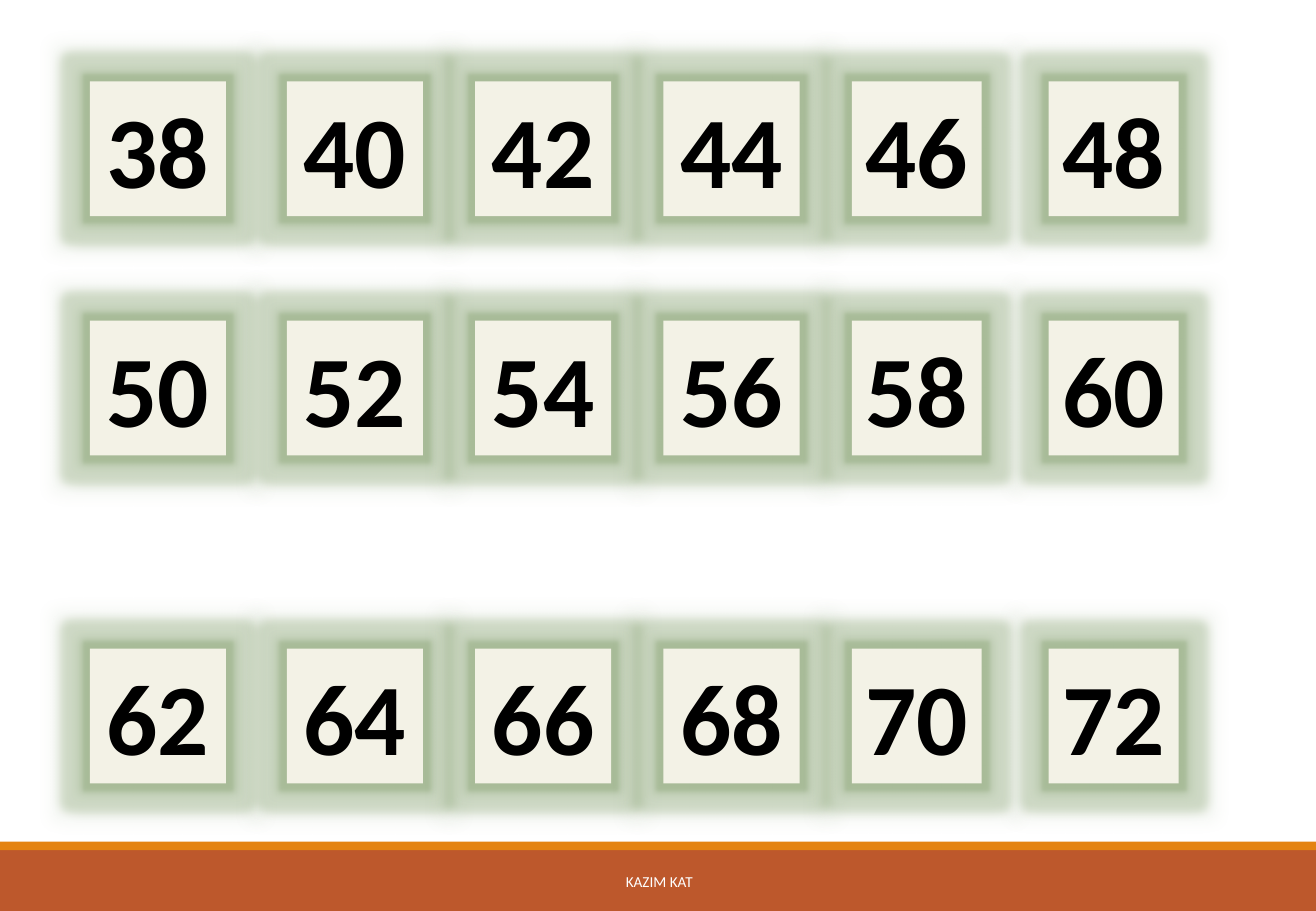
from lxml import etree
from pptx import Presentation
from pptx.dml.color import RGBColor
from pptx.enum.shapes import MSO_SHAPE
from pptx.enum.text import MSO_ANCHOR, PP_ALIGN
from pptx.oxml.ns import qn
from pptx.util import Inches, Pt

RECT = MSO_SHAPE.RECTANGLE
CENTER = PP_ALIGN.CENTER
TOP, MIDDLE = MSO_ANCHOR.TOP, MSO_ANCHOR.MIDDLE

UNIT = 0.1  # inches per grid column and row
WIDTH, HEIGHT = 108.3, 75
COLORS = {"card": "F3F2E6", "glow": "91AA7D", "number": "000000",
          "band": "BD582C", "stripe": "E48312", "footer": "FFFFFF"}
FORMATS = {
    "number": {"size": Pt(60), "bold": True, "name": "Calibri"},
    "footer": {"size": Pt(9), "bold": False, "name": "Calibri"},
}
CARD_COLUMNS = [(7.4, 11.2), (23.6, 11.2), (39.1, 11.2),
                (54.6, 11.2), (70.1, 10.7), (86.3, 10.7)]
CARD_ROWS = [6.7, 26.4, 53.4]
CARD_HEIGHT = 11.1
FIRST_NUMBER, STEP = 38, 2


class NumberSlide:
    def __init__(self):
        self.prs = Presentation()
        self.prs.slide_width, self.prs.slide_height = self.grid(WIDTH, HEIGHT)
        self.s = self.prs.slides.add_slide(self.prs.slide_layouts[6])

    def grid(self, *cells):
        return [Inches(n * UNIT) for n in cells]

    def rect(self, box, color):
        sp = self.s.shapes.add_shape(RECT, *self.grid(*box))
        sp.shadow.inherit = False
        sp.fill.solid()
        sp.fill.fore_color.rgb = RGBColor.from_string(COLORS[color])
        sp.line.fill.background()
        return sp

    def label(self, sp, text, style, anchor):
        tf = sp.text_frame
        tf.word_wrap = False
        tf.vertical_anchor = anchor
        p = tf.paragraphs[0]
        p.alignment = CENTER
        r = p.add_run()
        r.text = text
        for key, value in FORMATS[style].items():
            setattr(r.font, key, value)
        r.font.color.rgb = RGBColor.from_string(COLORS[style])

    def halo(self, sp):
        """Add a wide soft glow and a narrow, denser rim of the same colour."""
        effects = sp._element.spPr.find(qn("a:effectLst"))
        rim = {"blurRad": Pt(2), "sx": 111000, "sy": 111000,
               "algn": "ctr", "rotWithShape": 0}
        for tag, attrs in (("a:glow", {"rad": Pt(12)}), ("a:outerShdw", rim)):
            effect = etree.SubElement(effects, qn(tag))
            for key, value in attrs.items():
                effect.set(key, str(value))
            color = etree.SubElement(effect, qn("a:srgbClr"), val=COLORS["glow"])
            etree.SubElement(color, qn("a:alpha"), val="40000")

    def card(self, box, number):
        sp = self.rect(box, "card")
        self.halo(sp)
        self.label(sp, str(number), "number", TOP)

    def footer(self, text):
        self.rect((0, 70, WIDTH, 5), "band")
        self.rect((0, 69.3, WIDTH, 0.7), "stripe")
        sp = self.s.shapes.add_textbox(*self.grid(32.8, 70.6, 42.9, 4))
        self.label(sp, text, "footer", MIDDLE)


def main():
    slide = NumberSlide()
    slide.footer("KAZIM KAT")
    number = FIRST_NUMBER
    for top in CARD_ROWS:
        for left, width in CARD_COLUMNS:
            slide.card((left, top, width, CARD_HEIGHT), number)
            number += STEP
    slide.prs.save("out.pptx")


if __name__ == "__main__":
    main()
